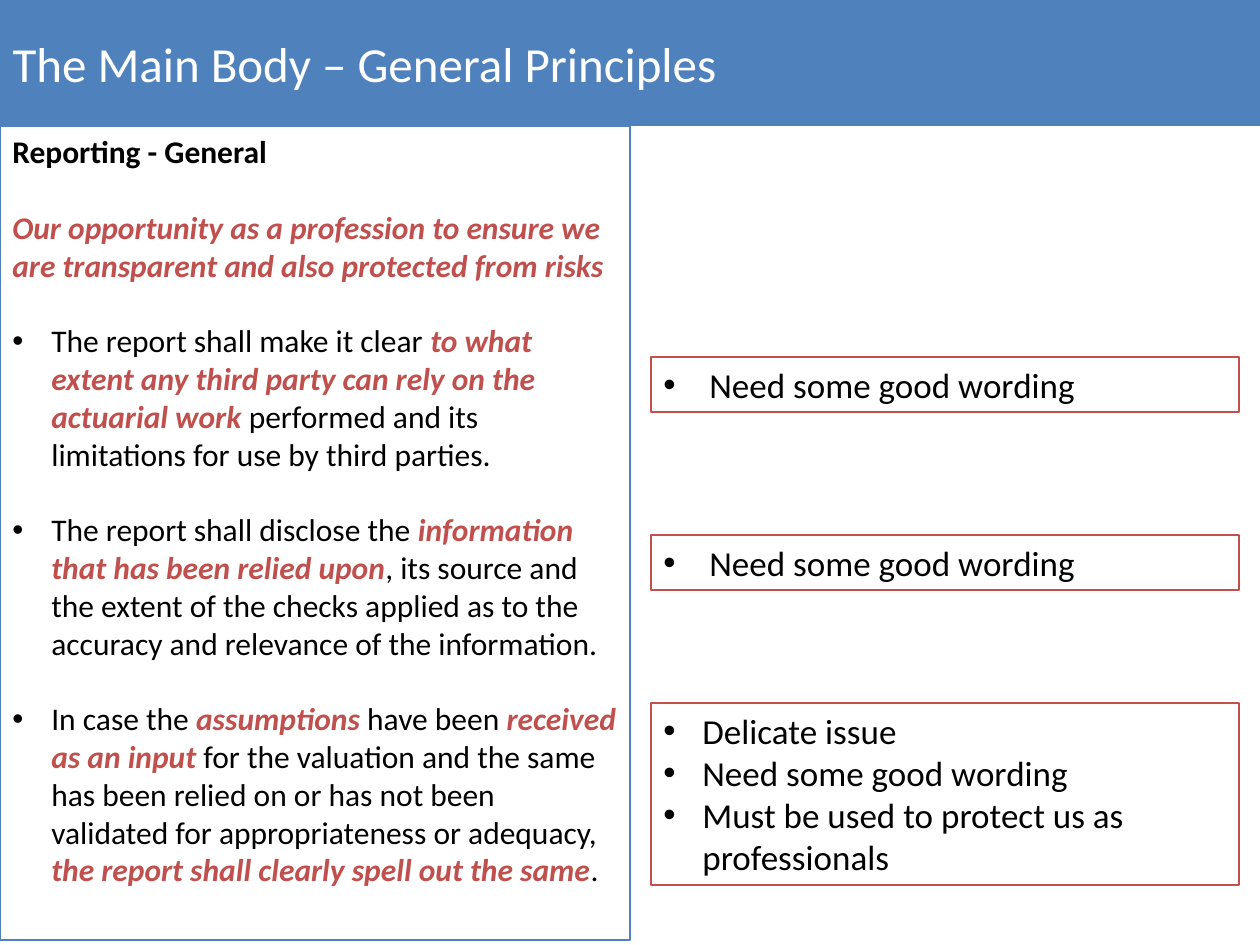
import pptx
import pptx.util
import pptx.dml.color
import pptx.enum.shapes
import pptx.enum.text
from lxml import etree

THEME = {
    "font": "Calibri",
    "blue": "4F81BD",
    "red": "C0504D",
    "black": "000000",
    "white": "FFFFFF",
    "title": 28,
    "body": 18,
    "comment": 20,
    "gap": 21.6,
    "line": 0.75,
}
EMU_PER_PX = 914400 / 126
WIDTH, HEIGHT = 1260, 945
HEADER_HEIGHT = 126
BODY_SIZE = (630, 814)
COMMENT_LEFT, COMMENT_WIDTH = 651, 588
INDENT, WIDE_INDENT = 39, 46

TITLE = "The Main Body – General Principles"
HEADING = "Reporting - General"
MESSAGE = "Our opportunity as a profession to ensure we are transparent and also protected from risks"
PRINCIPLES = [
    [("The report shall make it clear ", False),
     ("to what extent any third party can rely on the actuarial work ", True),
     ("performed and its limitations for use by third parties.", False)],
    [("The report shall disclose the ", False),
     ("information that has been relied upon", True),
     (", its source and the extent of the checks applied as to the accuracy "
      "and relevance of the information.", False)],
    [("In case the ", False),
     ("assumptions ", True),
     ("have been ", False),
     ("received as an input ", True),
     ("for the valuation and the same has been relied on or has not been "
      "validated for appropriateness or adequacy, ", False),
     ("the report shall clearly spell out the same", True),
     (".", False)],
]
COMMENTS = [
    (357, 55, WIDE_INDENT, ["Need some good wording"]),
    (535, 55, WIDE_INDENT, ["Need some good wording"]),
    (703, 182, INDENT, ["Delicate issue", "Need some good wording",
                        "Must be used to protect us as professionals"]),
]


def px(value):
    return pptx.util.Emu(round(value * EMU_PER_PX))


def color(name):
    return pptx.dml.color.RGBColor.from_string(THEME[name])


def set_font(font, size, color_name):
    font.name = THEME["font"]
    font.size = pptx.util.Pt(size)
    font.color.rgb = color(color_name)


def emphasize(font):
    font.bold = font.italic = True
    font.color.rgb = color("red")


def add_box(slide, left, top, width, height, line_color):
    shape = slide.shapes.add_shape(
        pptx.enum.shapes.MSO_SHAPE.RECTANGLE, px(left), px(top), px(width), px(height))
    shape.shadow.inherit = False
    shape.fill.background()
    shape.line.color.rgb = color(line_color)
    shape.line.width = pptx.util.Pt(THEME["line"])
    shape.text_frame.word_wrap = True
    shape.text_frame.vertical_anchor = pptx.enum.text.MSO_ANCHOR.TOP
    return shape


def add_paragraph(frame, runs, size, indent=0, gap=0):
    first = not frame.paragraphs[0].runs
    paragraph = frame.paragraphs[0] if first else frame.add_paragraph()
    paragraph.alignment = pptx.enum.text.PP_ALIGN.LEFT
    paragraph.space_before = pptx.util.Pt(gap)
    set_font(paragraph.font, size, "black")
    if indent:
        properties = paragraph._p.get_or_add_pPr()
        properties.set("marL", str(px(indent)))
        properties.set("indent", str(-px(indent)))
        namespace = pptx.oxml.ns.qn("a:buFont")
        bullet_font = etree.Element(namespace, typeface="Arial")
        bullet = etree.Element(pptx.oxml.ns.qn("a:buChar"), char="•")
        default_font = properties.find(pptx.oxml.ns.qn("a:defRPr"))
        default_font.addprevious(bullet_font)
        default_font.addprevious(bullet)
    for text, emphasized in runs:
        run = paragraph.add_run()
        run.text = text
        set_font(run.font, size, "black")
        if emphasized:
            emphasize(run.font)
    return paragraph


def add_title(slide):
    title = slide.shapes.title
    title.left, title.top = px(0), px(0)
    title.width, title.height = px(WIDTH), px(HEADER_HEIGHT)
    title.fill.solid()
    title.fill.fore_color.rgb = color("blue")
    frame = title.text_frame
    frame.text = TITLE
    frame.auto_size = pptx.enum.text.MSO_AUTO_SIZE.NONE
    frame.vertical_anchor = pptx.enum.text.MSO_ANCHOR.MIDDLE
    paragraph = frame.paragraphs[0]
    paragraph.alignment = pptx.enum.text.PP_ALIGN.LEFT
    set_font(paragraph.runs[0].font, THEME["title"], "white")


def main():
    presentation = pptx.Presentation()
    presentation.slide_width, presentation.slide_height = px(WIDTH), px(HEIGHT)
    slide = presentation.slides.add_slide(presentation.slide_layouts[5])
    add_title(slide)

    body = add_box(slide, 0, HEADER_HEIGHT, *BODY_SIZE, "blue").text_frame
    heading = add_paragraph(body, [(HEADING, False)], THEME["body"])
    heading.runs[0].font.bold = True
    add_paragraph(body, [(MESSAGE, True)], THEME["body"], gap=THEME["gap"])
    for runs in PRINCIPLES:
        add_paragraph(body, runs, THEME["body"], INDENT, THEME["gap"])

    for top, height, indent, lines in COMMENTS:
        box = add_box(slide, COMMENT_LEFT, top, COMMENT_WIDTH, height, "red")
        for line in lines:
            add_paragraph(box.text_frame, [(line, False)], THEME["comment"], indent)

    presentation.save("out.pptx")


if __name__ == "__main__":
    main()
